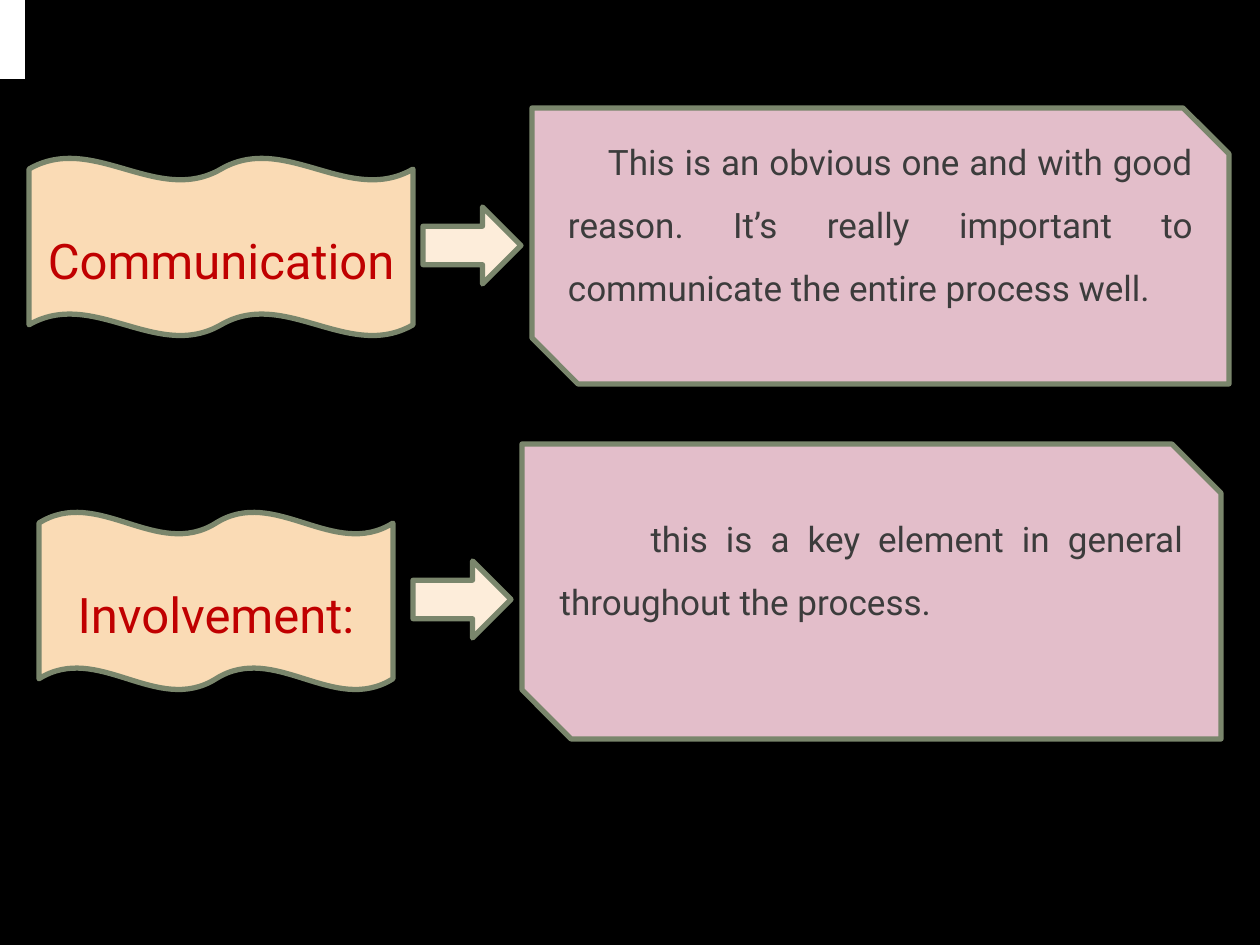
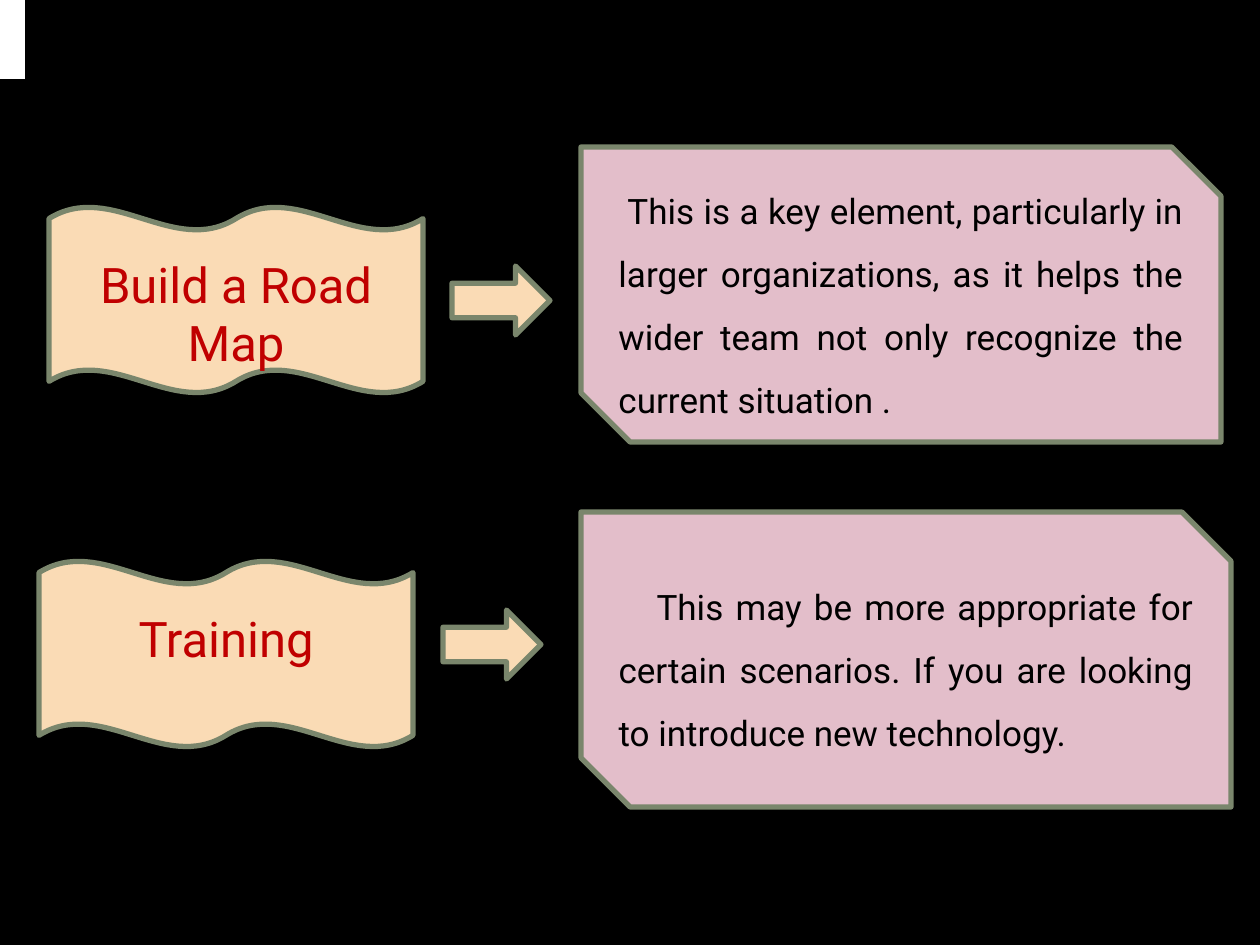
from pptx import Presentation
from pptx.dml.color import RGBColor
from pptx.enum.shapes import MSO_SHAPE
from pptx.enum.text import MSO_ANCHOR, PP_ALIGN
from pptx.util import Pt

SCALE = 914400 / 126
SLIDE_SIZE = (1260, 945)
CORNER_BOX = (0, 0, 25, 79)
SIDE_MARGIN = 13
COLORS = {
    "background": "000000",
    "corner": "FFFFFF",
    "wave": "FADBB5",
    "pale_arrow": "FDEDDA",
    "card": "E3BECA",
    "outline": "7A866C",
    "heading": "C00000",
    "gray_text": "3C3C3C",
    "black_text": "000000",
}

SLIDES = [
    {
        "arrow_color": "pale_arrow",
        "text_color": "gray_text",
        "card_margins": (0, 63),
        "rows": [
            {
                "heading": "Communication",
                "wave": (29, 158, 384, 178),
                "wave_margins": (26, 0),
                "arrow": (423, 207, 98, 77),
                "card": (532, 108, 697, 276),
                "indent": 40,
                "text": "This is an obvious one and with good reason. It’s really "
                        "important to communicate the entire process well.",
            },
            {
                "heading": "Involvement:",
                "wave": (39, 512, 354, 178),
                "wave_margins": (26, 0),
                "arrow": (413, 561, 98, 77),
                "card": (522, 444, 699, 295),
                "indent": 91,
                "text": "this is a key element in general throughout the process.",
            },
        ],
    },
    {
        "arrow_color": "wave",
        "text_color": "black_text",
        "card_margins": (6, 6),
        "rows": [
            {
                "heading": "Build a Road Map",
                "wave": (49, 207, 374, 186),
                "wave_margins": (26, 0),
                "arrow": (452, 266, 98, 69),
                "card": (581, 147, 640, 295),
                "indent": 9,
                "text": "This is a key element, particularly in larger organizations, "
                        "as it helps the wider team not only recognize the current "
                        "situation .",
            },
            {
                "heading": "Training",
                "wave": (39, 561, 374, 186),
                "wave_margins": (0, 33),
                "arrow": (443, 610, 98, 69),
                "card": (581, 512, 650, 295),
                "indent": 38,
                "text": "This may be more appropriate for certain scenarios. If you "
                        "are looking to introduce new technology.",
            },
        ],
    },
]


def px(length):
    return round(length * SCALE)


def color(name):
    return RGBColor.from_string(COLORS[name])


def add_block(slide, kind, box, fill, outlined=True):
    shape = slide.shapes.add_shape(kind, *map(px, box))
    shape.shadow.inherit = False
    shape.fill.solid()
    shape.fill.fore_color.rgb = color(fill)
    if outlined:
        shape.line.color.rgb = color("outline")
        shape.line.width = Pt(3)
    else:
        shape.line.fill.background()
    return shape


def write(shape, text, size, text_color, alignment, margins):
    frame = shape.text_frame
    frame.text = text
    frame.word_wrap = True
    frame.vertical_anchor = MSO_ANCHOR.MIDDLE
    frame.margin_left = frame.margin_right = px(SIDE_MARGIN)
    frame.margin_top, frame.margin_bottom = map(px, margins)
    paragraph = frame.paragraphs[0]
    paragraph.alignment = alignment
    font = paragraph.runs[0].font
    font.name = "Roboto"
    font.size = Pt(size)
    font.color.rgb = color(text_color)
    return paragraph


def add_row(slide, row, design):
    wave = add_block(slide, MSO_SHAPE.DOUBLE_WAVE, row["wave"], "wave")
    write(wave, row["heading"], 28, "heading", PP_ALIGN.CENTER, row["wave_margins"])
    add_block(slide, MSO_SHAPE.RIGHT_ARROW, row["arrow"], design["arrow_color"])
    card = add_block(slide, MSO_SHAPE.SNIP_2_DIAG_RECTANGLE, row["card"], "card")
    paragraph = write(card, row["text"], 20, design["text_color"],
                      PP_ALIGN.JUSTIFY, design["card_margins"])
    paragraph.line_spacing = 1.5
    paragraph._p.get_or_add_pPr().set("indent", str(px(row["indent"])))


def main():
    presentation = Presentation()
    presentation.slide_width, presentation.slide_height = map(px, SLIDE_SIZE)
    background = presentation.slide_master.background.fill
    background.solid()
    background.fore_color.rgb = color("background")
    for design in SLIDES:
        slide = presentation.slides.add_slide(presentation.slide_layouts[6])
        add_block(slide, MSO_SHAPE.RECTANGLE, CORNER_BOX, "corner", outlined=False)
        for row in design["rows"]:
            add_row(slide, row, design)
    presentation.save("out.pptx")


if __name__ == "__main__":
    main()
